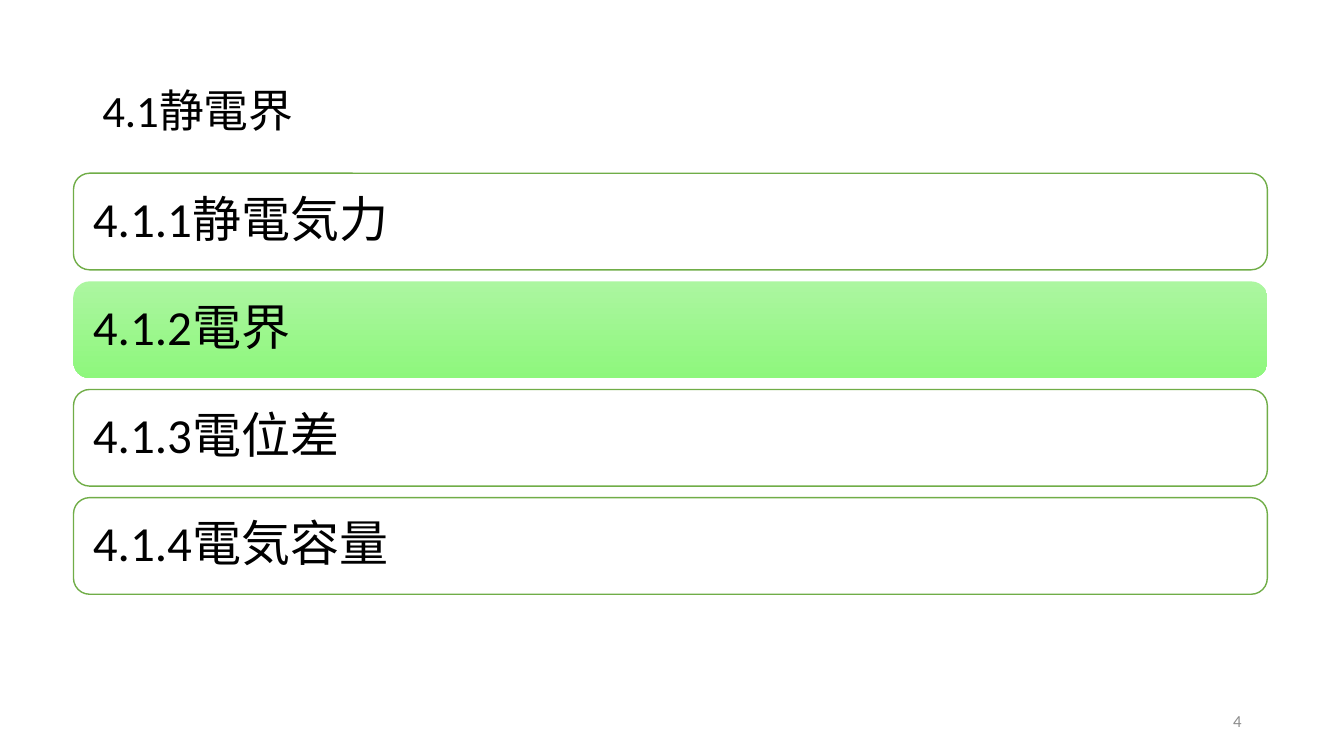
from pptx import Presentation
from pptx.dml.color import RGBColor
from pptx.enum.shapes import MSO_SHAPE
from pptx.enum.text import MSO_ANCHOR, PP_ALIGN
from pptx.util import Emu, Pt

PX = 9525
ROUNDED = MSO_SHAPE.ROUNDED_RECTANGLE
MIDDLE = MSO_ANCHOR.MIDDLE
LEFT, RIGHT = PP_ALIGN.LEFT, PP_ALIGN.RIGHT

FONT = "Calibri"
BLACK = RGBColor(0x00, 0x00, 0x00)
WHITE = RGBColor(0xFF, 0xFF, 0xFF)
GRAY = RGBColor(0x8C, 0x8C, 0x8C)
GREEN_LINE = RGBColor(0x70, 0xAD, 0x47)
GREEN_TOP = RGBColor(0xAC, 0xF6, 0xA0)
GREEN_BOTTOM = RGBColor(0x8E, 0xF7, 0x7D)

SECTIONS = ["4.1.1静電気力", "4.1.2電界", "4.1.3電位差", "4.1.4電気容量"]
CURRENT_SECTION = 1


def px(*lengths):
    return [Emu(length * PX) for length in lengths]


def write_line(shape, text, size, color, align=LEFT, spacing=0.9):
    frame = shape.text_frame
    frame.word_wrap = True
    frame.vertical_anchor = MIDDLE
    paragraph = frame.paragraphs[0]
    paragraph.alignment = align
    paragraph.line_spacing = spacing
    run = paragraph.add_run()
    run.text = text
    run.font.name = FONT
    run.font.size = Pt(size)
    run.font.color.rgb = color


def add_label(slide, box, text, size, color, align=LEFT, spacing=0.9):
    label = slide.shapes.add_textbox(*px(*box))
    write_line(label, text, size, color, align, spacing)


def add_section_bar(slide, box, text, is_current):
    bar = slide.shapes.add_shape(ROUNDED, *px(*box))
    bar.shadow.inherit = False
    if is_current:
        bar.fill.gradient()
        bar.fill.gradient_angle = 270
        top, bottom = bar.fill.gradient_stops
        top.position, bottom.position = 0, 1
        top.color.rgb, bottom.color.rgb = GREEN_TOP, GREEN_BOTTOM
        bar.line.fill.background()
    else:
        bar.fill.solid()
        bar.fill.fore_color.rgb = WHITE
        bar.line.color.rgb = GREEN_LINE
        bar.line.width = Pt(1)
    frame = bar.text_frame
    frame.margin_left, frame.margin_right = px(14, 14)
    frame.margin_top, frame.margin_bottom = px(10, 10)
    write_line(bar, text, 35, BLACK)


def add_section_list(slide, box, sections, current, gap=11):
    left, top, width, height = box
    bar_height = (height + gap) // len(sections) - gap
    for index, text in enumerate(sections):
        bar_top = top + index * (bar_height + gap)
        add_section_bar(slide, (left, bar_top, width, bar_height), text, index == current)


def main():
    presentation = Presentation()
    presentation.slide_width, presentation.slide_height = px(1280, 720)
    slide = presentation.slides.add_slide(presentation.slide_layouts[6])
    add_label(slide, (88, 38, 1104, 139), "4.1静電界", 32, BLACK)
    add_section_list(slide, (70, 165, 1137, 401), SECTIONS, CURRENT_SECTION)
    add_label(slide, (904, 667, 288, 38), "4", 12, GRAY, RIGHT, 1.0)
    presentation.save("out.pptx")


if __name__ == "__main__":
    main()
